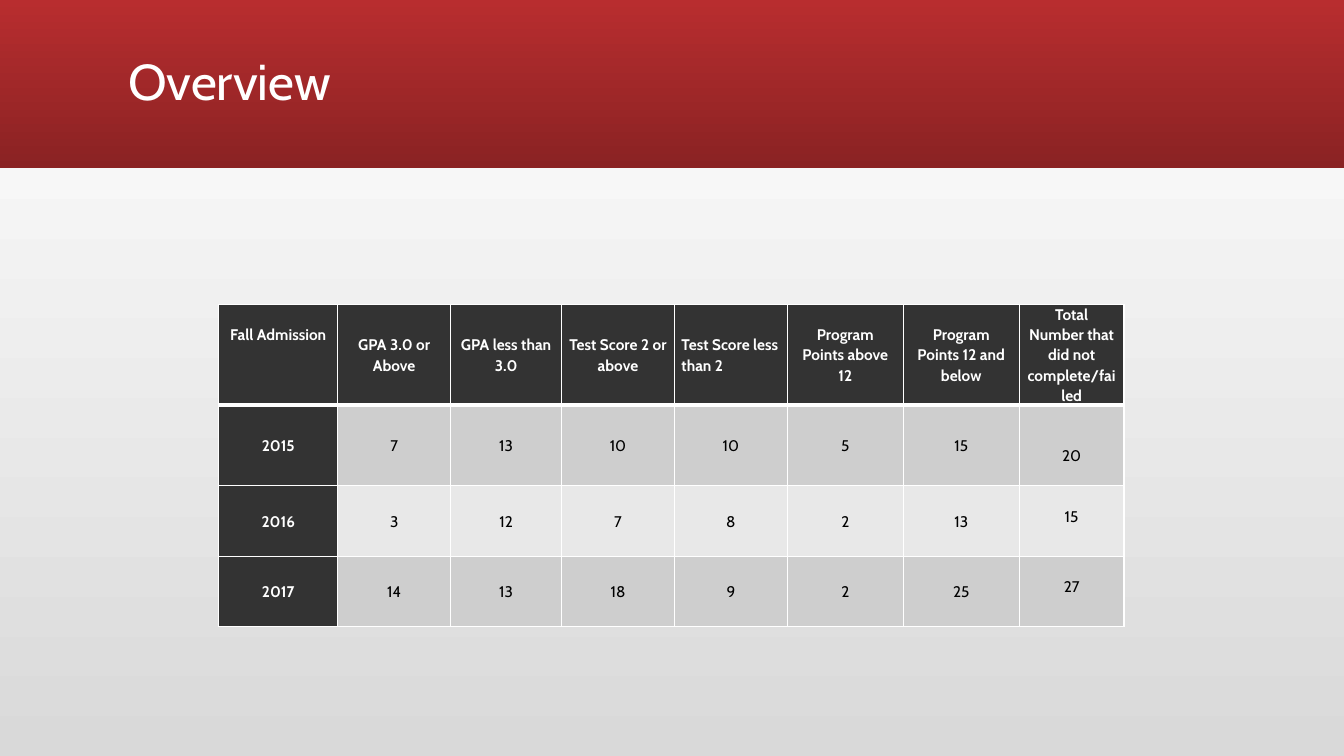
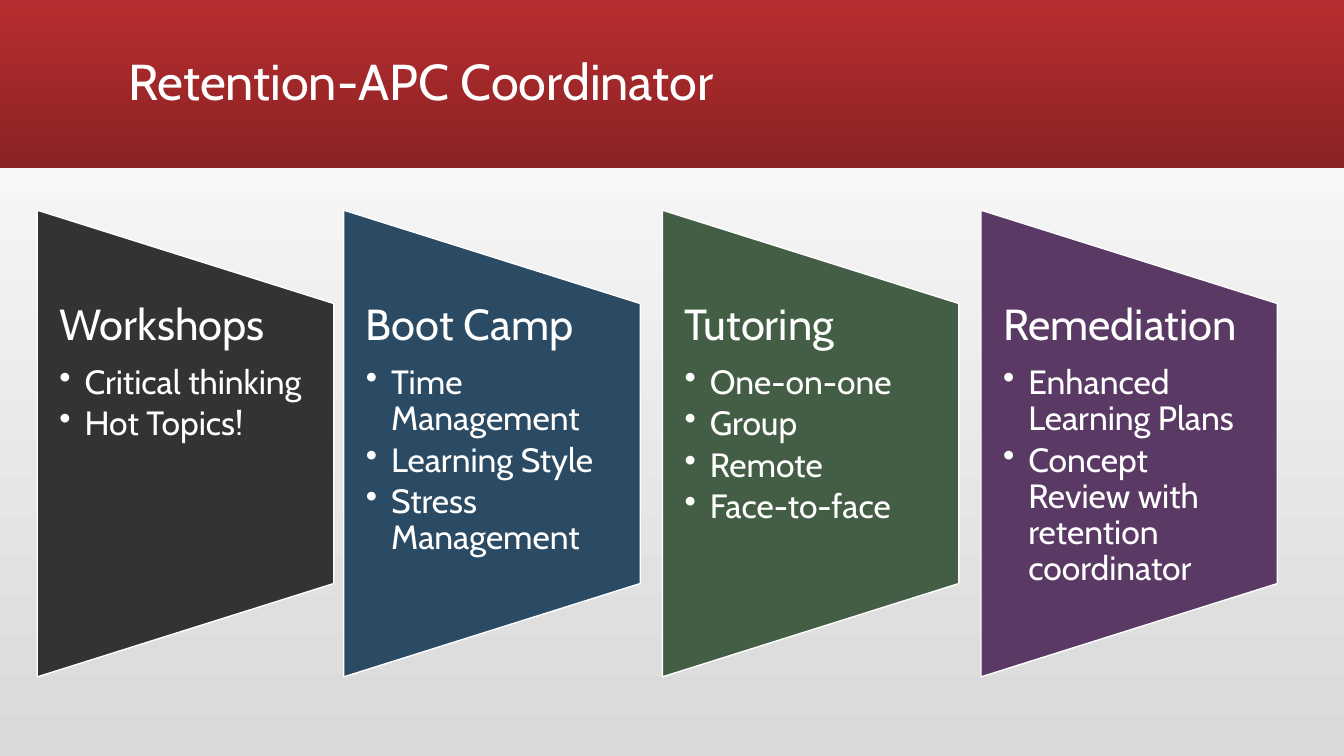
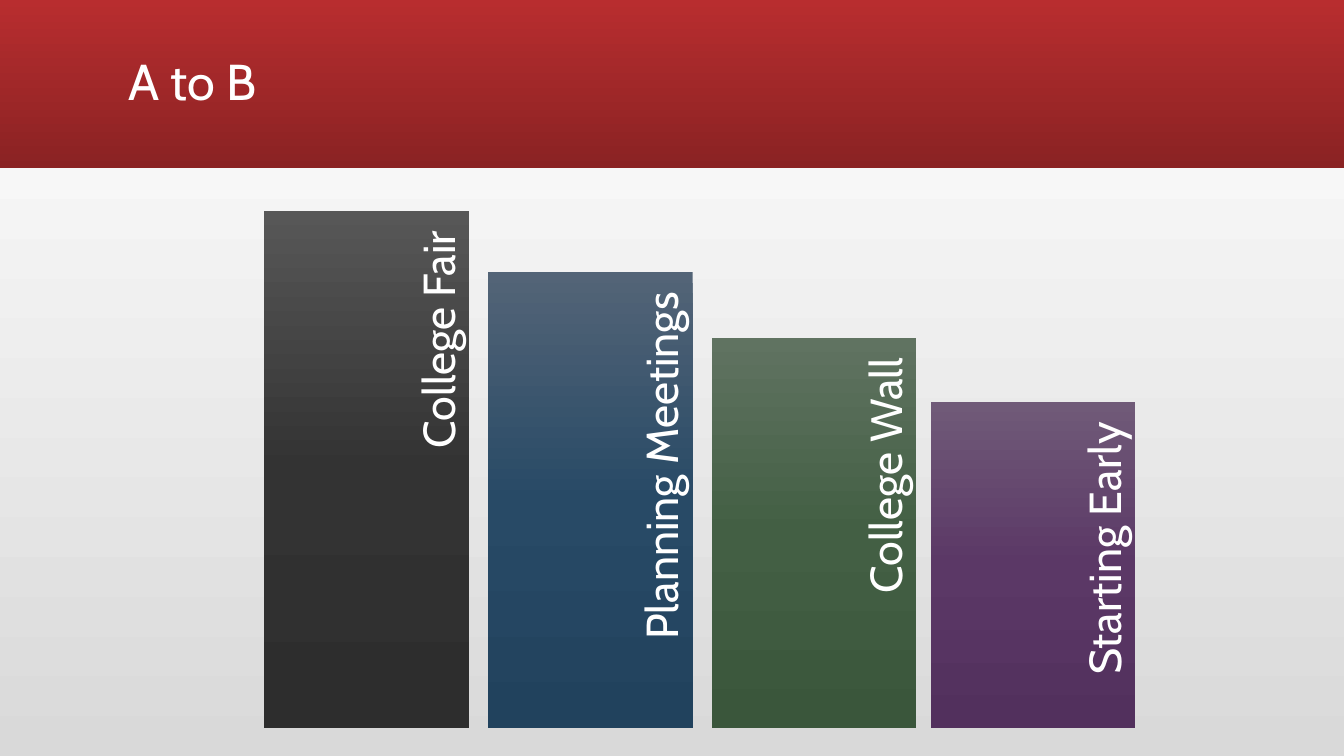
"""Build three slides on admissions, retention and college planning."""
import dataclasses
import typing

import lxml.etree
import pptx
import pptx.dml.color
import pptx.enum.shapes
import pptx.enum.text
import pptx.oxml.ns
import pptx.util

Inches = pptx.util.Inches
Pt = pptx.util.Pt
qn = pptx.oxml.ns.qn
ALIGN = pptx.enum.text.PP_ALIGN
ANCHOR = pptx.enum.text.MSO_ANCHOR
SHAPE = pptx.enum.shapes.MSO_SHAPE

FONT = "Cabin"
COLORS = {
    "white": "FFFFFF", "black": "000000", "backdrop": "D9D9D9",
    "band_top": "B82D2F", "band_bottom": "8A2223",
    "charcoal": "333333", "blue": "2B4A63", "green": "445E45", "purple": "5A3A64",
    "row_dark": "CECECE", "row_light": "E8E8E8",
}
BAR_GRADIENTS = {
    "charcoal": ("575757", "333333", "2D2D2D"),
    "blue": ("536477", "284A66", "21425D"),
    "green": ("607361", "435F44", "3A563B"),
    "purple": ("705A78", "5B3866", "52305D"),
}
TITLE_BOX = {"left": Inches(1.17), "top": Inches(0.11),
             "width": Inches(11), "height": Inches(1.45)}
TITLE_FRAME = {"vertical_anchor": ANCHOR.MIDDLE, "word_wrap": True,
               "auto_size": pptx.enum.text.MSO_AUTO_SIZE.NONE}
PANEL_FRAME = {"word_wrap": True, "margin_left": Inches(0.22), "margin_top": 0,
               "margin_right": Inches(0.22), "margin_bottom": 0}
BAR_FRAME = {"word_wrap": True, "vertical_anchor": ANCHOR.MIDDLE,
             "margin_left": Inches(0.13), "margin_top": 0,
             "margin_right": Inches(0.2), "margin_bottom": Inches(0.04)}
CELL_MARGINS = {"margin_left": Inches(0.07), "margin_right": Inches(0.07),
                "margin_bottom": 0}

COLUMN_WIDTHS = (1.18, 1.12, 1.1, 1.12, 1.12, 1.15, 1.15, 1.04)
ROW_HEIGHTS = (0.99, 0.8, 0.7, 0.7)
ADMISSIONS = (
    ("Fall Admission", "GPA 3.0 or Above", "GPA less than 3.0", "Test Score 2 or above",
     "Test Score less than 2", "Program Points above 12", "Program Points 12 and below",
     "Total Number that did not complete/failed"),
    ("2015", "7", "13", "10", "10", "5", "15", "20"),
    ("2016", "3", "12", "7", "8", "2", "13", "15"),
    ("2017", "14", "13", "18", "9", "2", "25", "27"),
)
TOP_MARGINS = {(0, 0): 0.2, (0, 7): 0, (1, 7): 0.4, (2, 7): 0.2, (3, 7): 0.2}
LEFT_ALIGNED = (0, 4)


@dataclasses.dataclass(frozen=True)
class Panel:
    left: float
    color: str
    heading: str
    items: tuple[str, ...]


@dataclasses.dataclass(frozen=True)
class Bar:
    left: float
    top: float
    color: str
    label: str


PANELS = (
    Panel(0.37, "charcoal", "Workshops", ("Critical thinking", "Hot Topics!")),
    Panel(3.41, "blue", "Boot Camp",
          ("Time Management", "Learning Style", "Stress Management")),
    Panel(6.57, "green", "Tutoring", ("One-on-one", "Group", "Remote", "Face-to-face")),
    Panel(9.73, "purple", "Remediation",
          ("Enhanced Learning Plans", "Concept Review with retention coordinator")),
)
BARS = (
    Bar(2.62, 2.09, "charcoal", "College Fair"),
    Bar(4.84, 2.7, "blue", "Planning Meetings"),
    Bar(7.06, 3.35, "green", "College Wall"),
    Bar(9.23, 3.99, "purple", "Starting Early"),
)
BAR_WIDTH, BAR_BOTTOM = 2.03, 7.22
PANEL_WIDTH, PANEL_HEIGHT, PANEL_MIDDLE = 2.94, 4.63, 4.4


def rgb(name: str) -> pptx.dml.color.RGBColor:
    return pptx.dml.color.RGBColor.from_string(COLORS[name])


def apply(target: typing.Any, values: dict[str, typing.Any]) -> None:
    for name, value in values.items():
        setattr(target, name, value)


def set_gradient(fill: typing.Any, element: typing.Any, colors: tuple[str, ...],
                 angle: int) -> None:
    fill.gradient()
    fill.gradient_angle = angle
    stops = next(element.iter(qn("a:gsLst")))
    for stop in list(stops):
        stops.remove(stop)
    for i, color in enumerate(colors):
        stop = lxml.etree.SubElement(stops, qn("a:gs"),
                                     pos=str(100000 * i // (len(colors) - 1)))
        lxml.etree.SubElement(stop, qn("a:srgbClr"), val=color)


def write(p: typing.Any, text: str, size: float, color: str = "white", bold: bool = False,
          **layout: typing.Any) -> None:
    apply(p, {"line_spacing": 0.9, **layout})
    r = p.add_run()
    r.text = text
    apply(r.font, {"name": FONT, "size": Pt(size), "bold": bold})
    r.font.color.rgb = rgb(color)


def add_box(s: typing.Any, kind: typing.Any, left: float, top: float, width: float,
            height: float) -> typing.Any:
    sp = s.shapes.add_shape(kind, Inches(left), Inches(top), Inches(width), Inches(height))
    sp.shadow.inherit = False
    sp.line.fill.background()
    return sp


def add_text_frame(s: typing.Any, left: float, top: float, width: float, height: float,
                   frame: dict[str, typing.Any], rotation: float = 0) -> typing.Any:
    sp = s.shapes.add_textbox(Inches(left), Inches(top), Inches(width), Inches(height))
    sp.rotation = rotation
    apply(sp.text_frame, frame)
    return sp.text_frame


def style_theme(prs: typing.Any, s: typing.Any) -> None:
    master = prs.slide_master
    set_gradient(master.background.fill, master.element,
                 (COLORS["backdrop"], COLORS["white"]), 90)
    band = add_box(s, SHAPE.RECTANGLE, 0, 0, 13.33, 1.67)
    set_gradient(band.fill, band.element, (COLORS["band_top"], COLORS["band_bottom"]), 270)
    s.slide_layout.shapes.element.insert(2, band.element)


def add_slide(prs: typing.Any, title: str) -> typing.Any:
    s = prs.slides.add_slide(prs.slide_layouts[5])
    sp = s.shapes.title
    apply(sp, TITLE_BOX)
    apply(sp.text_frame, TITLE_FRAME)
    write(sp.text_frame.paragraphs[0], title, 36, alignment=ALIGN.LEFT)
    return s


def set_borders(cell: typing.Any, bottom: float) -> None:
    tc_pr = cell._tc.get_or_add_tcPr()
    for side, width in (("L", 1), ("R", 1), ("T", 1), ("B", bottom)):
        ln = lxml.etree.SubElement(tc_pr, qn(f"a:ln{side}"), w=str(Pt(width)))
        fill = lxml.etree.SubElement(ln, qn("a:solidFill"))
        lxml.etree.SubElement(fill, qn("a:srgbClr"), val=COLORS["white"])


def format_cell(cell: typing.Any, row: int, col: int, text: str) -> None:
    heading = row == 0 or col == 0
    set_borders(cell, 3 if row == 0 else 1)
    cell.fill.solid()
    cell.fill.fore_color.rgb = rgb(
        "charcoal" if heading else "row_dark" if row % 2 else "row_light")
    from_top = (row, col) in TOP_MARGINS
    apply(cell, {**CELL_MARGINS, "margin_top": Inches(TOP_MARGINS.get((row, col), 0)),
                 "vertical_anchor": ANCHOR.TOP if from_top else ANCHOR.MIDDLE})
    write(cell.text_frame.paragraphs[0], text, 11, "white" if heading else "black", heading,
          line_spacing=1.07,
          alignment=ALIGN.LEFT if (row, col) == LEFT_ALIGNED else ALIGN.CENTER)


def add_admissions(s: typing.Any) -> None:
    table = s.shapes.add_table(
        len(ROW_HEIGHTS), len(COLUMN_WIDTHS), Inches(2.17), Inches(3.02),
        Inches(sum(COLUMN_WIDTHS)), Inches(sum(ROW_HEIGHTS))).table
    for column, width in zip(table.columns, COLUMN_WIDTHS):
        column.width = Inches(width)
    for row, height in zip(table.rows, ROW_HEIGHTS):
        row.height = Inches(height)
    for i, texts in enumerate(ADMISSIONS):
        for j, text in enumerate(texts):
            format_cell(table.cell(i, j), i, j, text)


def add_bullet(p: typing.Any) -> None:
    p_pr = p._p.get_or_add_pPr()
    for name, value in {"marL": Inches(0.25), "indent": -Inches(0.25)}.items():
        p_pr.set(name, str(value))
    lxml.etree.SubElement(p_pr, qn("a:buFontTx"))
    lxml.etree.SubElement(p_pr, qn("a:buChar"), char="•")


def add_panel(s: typing.Any, panel: Panel) -> None:
    sp = add_box(s, SHAPE.FLOWCHART_MANUAL_OPERATION,
                 panel.left + (PANEL_WIDTH - PANEL_HEIGHT) / 2,
                 PANEL_MIDDLE - PANEL_WIDTH / 2, PANEL_HEIGHT, PANEL_WIDTH)
    sp.rotation = 270
    sp.fill.solid()
    sp.fill.fore_color.rgb = rgb(panel.color)
    sp.line.color.rgb = rgb("white")
    sp.line.width = Pt(1)
    tf = add_text_frame(s, panel.left, 3.01, PANEL_WIDTH, 2.78, PANEL_FRAME)
    write(tf.paragraphs[0], panel.heading, 31, space_after=Pt(10.85))
    for item in panel.items:
        p = tf.add_paragraph()
        write(p, item, 24, space_after=Pt(3.6), level=1)
        add_bullet(p)


def add_bar(s: typing.Any, bar: Bar) -> None:
    height = BAR_BOTTOM - bar.top
    sp = add_box(s, SHAPE.RECTANGLE, bar.left, bar.top, BAR_WIDTH, height)
    set_gradient(sp.fill, sp.element, BAR_GRADIENTS[bar.color], 270)
    length, thickness = 0.9 * height, 0.53
    tf = add_text_frame(s, bar.left + 1.77 - length / 2,
                        bar.top + (length - thickness) / 2,
                        length, thickness, BAR_FRAME, 270)
    write(tf.paragraphs[0], bar.label, 32, alignment=ALIGN.RIGHT)


def main() -> None:
    prs = pptx.Presentation()
    apply(prs, {"slide_width": Inches(13.33), "slide_height": Inches(7.5)})
    s = add_slide(prs, "Overview")
    style_theme(prs, s)
    add_admissions(s)
    s = add_slide(prs, "Retention-APC Coordinator")
    for panel in PANELS:
        add_panel(s, panel)
    s = add_slide(prs, "A to B")
    for bar in BARS:
        add_bar(s, bar)
    prs.save("out.pptx")


if __name__ == "__main__":
    main()
